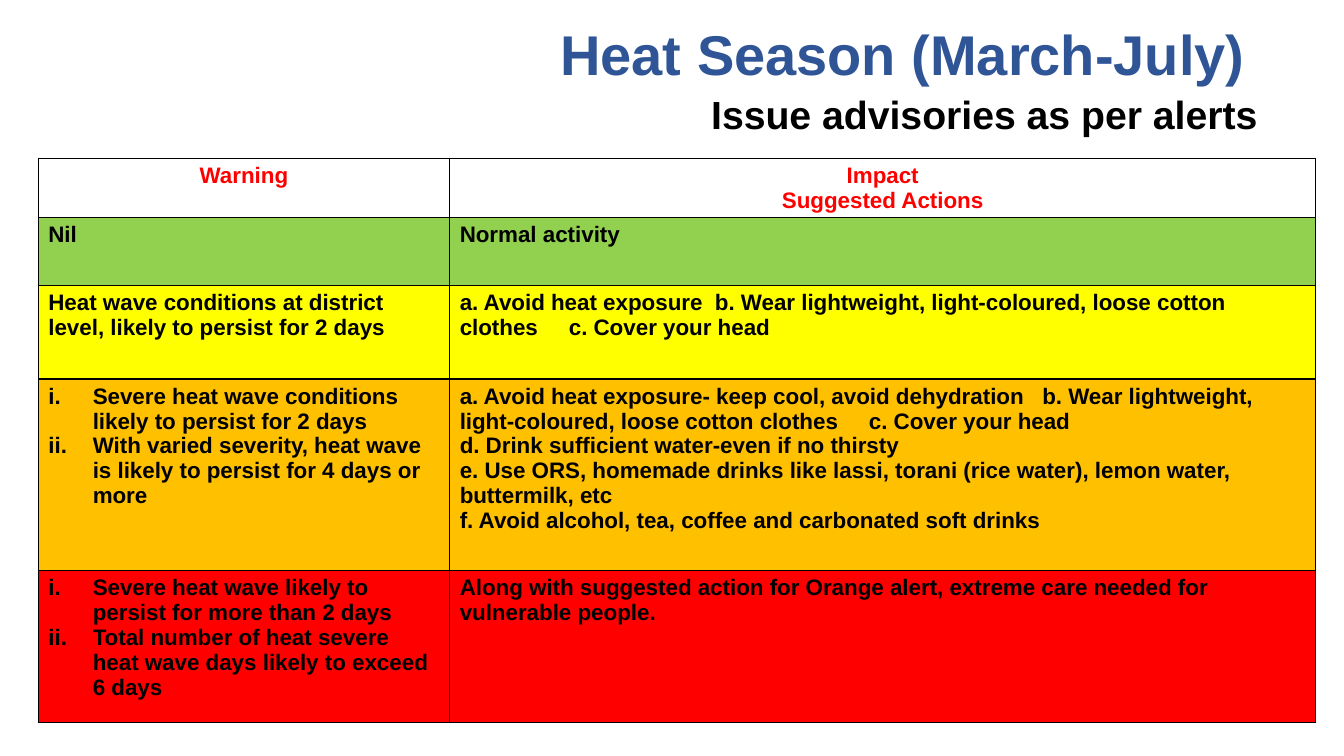
from lxml import etree
from pptx import Presentation
from pptx import util as u
from pptx.dml.color import RGBColor
from pptx.enum import text
from pptx.oxml import ns

PX = 9144
ROWS = [
    (59, "FFFFFF", ["Warning"], ["Impact", "Suggested Actions"]),
    (67, "92D050", ["Nil"], ["Normal activity"]),
    (93, "FFFF00",
     ["Heat wave conditions at district level, likely to persist for 2 days"],
     ["a. Avoid heat exposure  b. Wear lightweight, light-coloured, loose cotton "
      "clothes     c. Cover your head"]),
    (190, "FFC000",
     ["Severe heat wave conditions likely to persist for 2 days",
      "With varied severity, heat wave is likely to persist for 4 days or more"],
     ["a. Avoid heat exposure- keep cool, avoid dehydration   b. Wear lightweight, "
      "light-coloured, loose cotton clothes     c. Cover your head",
      "d. Drink sufficient water-even if no thirsty",
      "e. Use ORS, homemade drinks like lassi, torani (rice water), lemon water, "
      "buttermilk, etc",
      "f. Avoid alcohol, tea, coffee and carbonated soft drinks"]),
    (151, "FF0000",
     ["Severe heat wave likely to persist for more than 2 days",
      "Total number of heat severe heat wave days likely to exceed 6 days"],
     ["Along with suggested action for Orange alert, extreme care needed for "
      "vulnerable people."]),
]


def px(*lengths):
    """Turn whole px lengths into EMU."""
    return [u.Emu(length * PX) for length in lengths]


def color(code):
    """Turn a hex string into a colour."""
    return RGBColor.from_string(code)


def style(para, size, code, align):
    """Set the font and alignment of a paragraph."""
    para.alignment = align
    font = para.font
    font.name, font.size, font.bold = "Arial", u.Pt(size), True
    font.color.rgb = color(code)


def add_heading(page, place, words, size, code):
    """Add a right-aligned heading, centred vertically in its box."""
    frame = page.shapes.add_textbox(*px(*place)).text_frame
    frame.word_wrap = True
    frame.vertical_anchor = text.MSO_ANCHOR.MIDDLE
    para = frame.paragraphs[0]
    para.text = words
    para.line_spacing = 0.9
    style(para, size, code, text.PP_ALIGN.RIGHT)


def number_roman(para):
    """Number a paragraph with lower-case roman numerals."""
    props = para._p.get_or_add_pPr()
    indent = px(44)[0]
    props.set("marL", str(indent))
    props.set("indent", str(-indent))
    bullet = etree.Element(ns.qn("a:buAutoNum"), type="romanLcPeriod")
    props.insert_element_before(bullet, "a:tabLst", "a:defRPr", "a:extLst")


def add_borders(cell):
    """Draw a thin black border on each side of a cell."""
    props = cell._tc.get_or_add_tcPr()
    for index, side in enumerate(("lnL", "lnR", "lnT", "lnB")):
        line = etree.Element(ns.qn(f"a:{side}"), w=str(u.Pt(1)))
        fill = etree.SubElement(line, ns.qn("a:solidFill"))
        etree.SubElement(fill, ns.qn("a:srgbClr"), val="000000")
        props.insert(index, line)


def fill_cell(cell, lines, fill, header, numbered):
    """Write the lines of a cell and paint it."""
    cell.fill.solid()
    cell.fill.fore_color.rgb = color(fill)
    cell.margin_bottom = 0
    add_borders(cell)
    cell.text = "\n".join(lines)
    code = "FF0000" if header else "000000"
    align = text.PP_ALIGN.CENTER if header else text.PP_ALIGN.LEFT
    for para in cell.text_frame.paragraphs:
        style(para, 16, code, align)
        if numbered:
            number_roman(para)


def add_alert_table(page):
    """Add the table of warnings and suggested actions."""
    total = sum(row[0] for row in ROWS)
    table = page.shapes.add_table(len(ROWS), 2, *px(38, 157, 1267, total)).table
    for column, width in zip(table.columns, px(408, 859)):
        column.width = width
    for index, (height, fill, warning, actions) in enumerate(ROWS):
        table.rows[index].height = px(height)[0]
        header = index == 0
        fill_cell(table.cell(index, 0), warning, fill, header, len(warning) > 1)
        fill_cell(table.cell(index, 1), actions, fill, header, False)


def main():
    """Build the heat season slide."""
    deck = Presentation()
    deck.slide_width, deck.slide_height = px(1333, 750)
    page = deck.slides.add_slide(deck.slide_layouts[6])
    add_alert_table(page)
    add_heading(page, (94, 16, 1150, 82), "Heat Season (March-July)", 40, "2F5597")
    add_heading(page, (107, 75, 1150, 82), "Issue advisories as per alerts", 28, "000000")
    deck.save("out.pptx")


if __name__ == "__main__":
    main()
